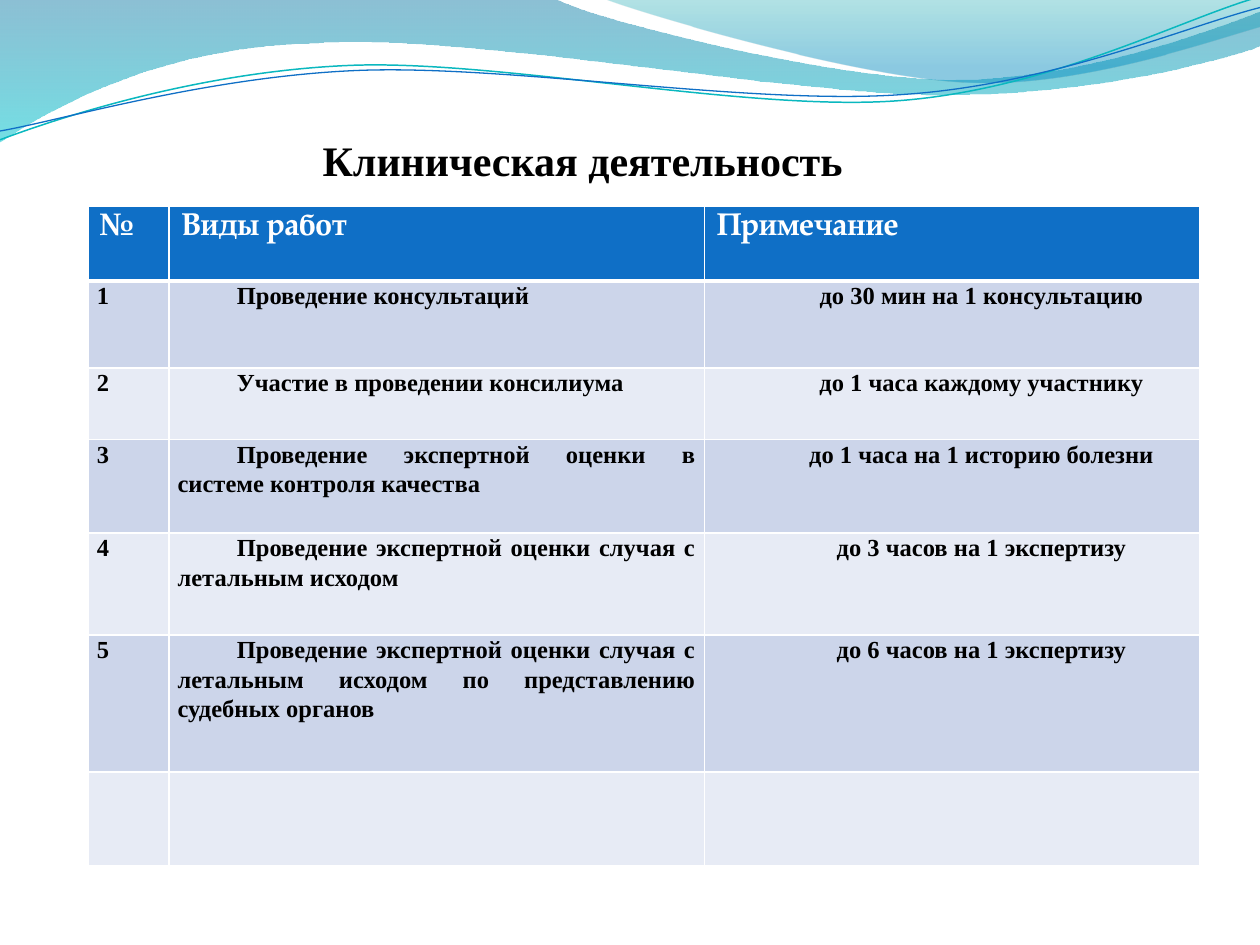
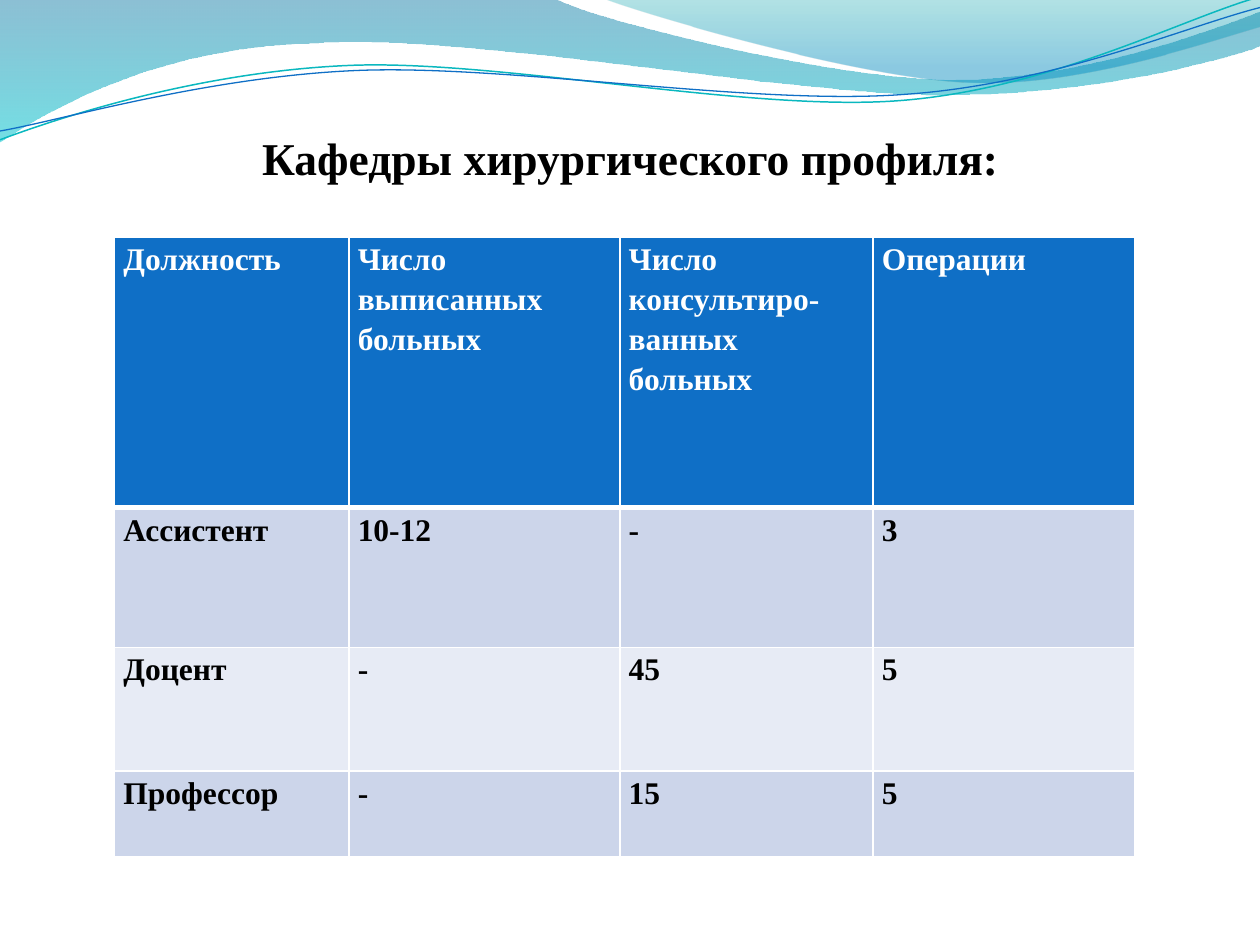
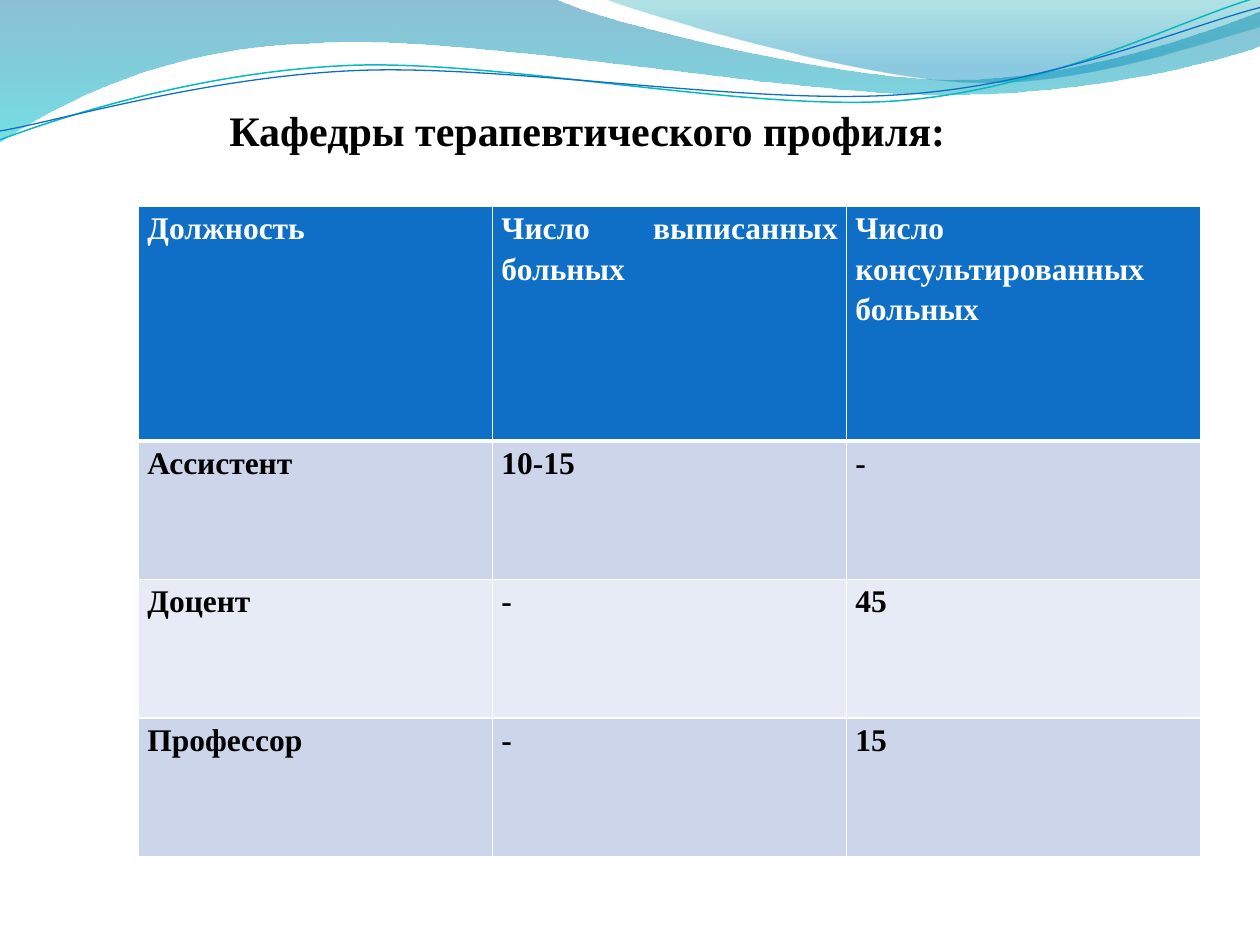
from lxml.etree import Element, SubElement
from pptx import Presentation
from pptx.dml.color import RGBColor
from pptx.enum.text import PP_ALIGN as Align
from pptx.oxml.ns import qn
from pptx.util import Inches, Pt

SERIF = "Times New Roman"
HEADER_FONT = "TeX Gyre Pagella"
WHITE, BLACK, BLUE, TEAL = "FFFFFF", "000000", "0F6FC6", "0AB8BF"
BANDS = ["CCD5EA", "E7EBF5"]

# Waves: start point, then segments of one point (line) or three (Bezier curve).
WAVE_FILLS = [
    ([(0, 0), [(4.4, -0.01)],
      [(4.76, 0.17), (6.64, 0.63), (7.58, 0.63)],
      [(8.53, 0.63), (9.58, 0.26), (10, 0.09)],
      [(10.01, 0.36)],
      [(9.83, 0.44), (8.7, 0.76), (7.46, 0.75)],
      [(6.22, 0.75), (3.82, 0.28), (2.57, 0.34)],
      [(1.29, 0.36), (0.46, 0.83), (-0.01, 1.13)],
      [(0, 0)]],
     [(0, "0074A1", 45), (1, "00C6CF", 55)]),
    ([(4.79, -0.01),
      [(5.09, 0.11), (6.82, 0.62), (7.69, 0.65)],
      [(8.56, 0.69), (9.61, 0.32), (10, 0.21)],
      [(10, 0)], [(4.79, -0.01)]],
     [(0, "00A1A9", 30), (0.8, "008BBF", 45)]),
]
WAVE_LINES = [
    ([(0, 1.11),
      [(0.48, 0.93), (1.58, 0.57), (2.77, 0.52)],
      [(3.95, 0.47), (5.93, 0.89), (7.13, 0.8)],
      [(8.33, 0.71), (9.38, 0.15), (9.98, -0.02)]], TEAL, 0.85),
    ([(0, 1.04),
      [(0.47, 0.96), (1.64, 0.61), (2.83, 0.56)],
      [(4.03, 0.51), (5.97, 0.84), (7.17, 0.75)],
      [(8.36, 0.67), (9.41, 0.21), (10, 0.06)]], BLUE, 0.75),
]

PAGES = [
    {"title": "Клиническая деятельность", "title_size": 24,
     "title_at": (0.55, 1.02, 8.95, 4.92), "title_margin": (2.01, 0.05),
     "table_at": (0.7, 1.64), "columns": [0.64, 4.25, 3.93],
     "heights": [0.59, 0.69, 0.57, 0.74, 0.81, 1.09, 0.74],
     "works": True,
     "rows": [
         ["№", "Виды работ", "Примечание"],
         ["1", "Проведение консультаций", "до 30 мин на 1 консультацию"],
         ["2", "Участие в проведении консилиума", "до 1 часа каждому участнику"],
         ["3", "Проведение экспертной оценки в системе контроля качества",
          "до 1 часа на 1 историю болезни"],
         ["4", "Проведение экспертной оценки случая с летальным исходом",
          "до 3 часов на 1 экспертизу"],
         ["5", "Проведение экспертной оценки случая с летальным исходом "
               "по представлению судебных органов",
          "до 6 часов на 1 экспертизу"],
         ["", "", ""]]},
    {"title": "Кафедры хирургического профиля:", "title_size": 26,
     "title_at": (0.62, 0.39, 8.95, 1.63), "title_margin": (1.46, 0.64),
     "table_at": (0.91, 1.88), "columns": [1.86, 2.15, 2.01, 2.08],
     "heights": [2.15, 1.11, 0.98, 0.68],
     "works": False,
     "rows": [
         ["Должность", "Число выписанных больных",
          "Число консультиро-ванных больных", "Операции"],
         ["Ассистент", "10-12", "-", "3"],
         ["Доцент", "-", "45", "5"],
         ["Профессор", "-", "15", "5"]]},
    {"title": "Кафедры терапевтического профиля:", "title_size": 24,
     "title_at": (0.55, 0.78, 8.95, 1.02), "title_margin": (1.27, 0.05),
     "table_at": (1.1, 1.64), "columns": [2.81] * 3,
     "heights": [1.86] + [1.1] * 3,
     "works": False,
     "rows": [
         ["Должность", "Число выписанных больных",
          "Число консультированных больных"],
         ["Ассистент", "10-15", "-"],
         ["Доцент", "-", "45"],
         ["Профессор", "-", "15"]]},
]
# Alignment, left margin and first-line indent of each column in the list of works
WORK_COLUMNS = [(Align.JUSTIFY, 0.38, -0.38), (Align.JUSTIFY, 0, 0.47),
                (Align.CENTER, 0, 0.47)]


def color(value):
    return RGBColor.from_string(value)


def add_wave(page, outline, closed):
    """Draw the outline's end points, then bend the three-point segments."""
    start, *segments = outline
    builder = page.shapes.build_freeform(Inches(start[0]), Inches(start[1]))
    ends = [(Inches(x), Inches(y)) for x, y in (segment[-1] for segment in segments)]
    builder.add_line_segments(ends, close=closed)
    wave = builder.convert_to_shape()
    wave.shadow.inherit = False
    sides = list(wave.element.iter(qn("a:lnTo")))
    for side, segment in zip(sides, segments):
        if len(segment) == 3:
            curve = Element(qn("a:cubicBezTo"))
            for x, y in segment:
                SubElement(curve, qn("a:pt"), x=str(Inches(x) - wave.left),
                           y=str(Inches(y) - wave.top))
            side.getparent().replace(side, curve)
    return wave


deck = Presentation()
deck.slide_width, deck.slide_height = Inches(10), Inches(7.5)
layout = deck.slide_layouts[6]
for holder in list(layout.placeholders):
    holder.element.getparent().remove(holder.element)
pages = [deck.slides.add_slide(layout) for _ in PAGES]

# The waves are drawn once and moved to the layout that all pages share.
for outline, stops in WAVE_FILLS:
    wave = add_wave(pages[0], outline, True)
    wave.line.fill.background()
    wave.fill.gradient()
    wave.fill.gradient_angle = 270
    for stop, (position, shade, _) in zip(wave.fill.gradient_stops, stops):
        stop.position = position
        stop.color.rgb = color(shade)
    shades = list(wave.element.spPr.iter(qn("a:srgbClr")))
    for shade, (_, _, opacity) in zip(shades, stops):
        SubElement(shade, qn("a:alpha"), val=str(opacity * 1000))
for outline, shade, width in WAVE_LINES:
    wave = add_wave(pages[0], outline, False)
    wave.fill.background()
    wave.line.color.rgb = color(shade)
    wave.line.width = Pt(width)
for wave in list(pages[0].shapes):
    layout.shapes.element.append(wave.element)

for page, content in zip(pages, PAGES):
    box = page.shapes.add_textbox(*map(Inches, content["title_at"]))
    frame = box.text_frame
    frame.word_wrap = True
    frame.margin_left, frame.margin_top = map(Inches, content["title_margin"])
    frame.text = content["title"]
    font = frame.paragraphs[0].runs[0].font
    font.name, font.size, font.bold = SERIF, Pt(content["title_size"]), True
    font.color.rgb = color(BLACK)

    rows, columns, heights = content["rows"], content["columns"], content["heights"]
    left, top = content["table_at"]
    table = page.shapes.add_table(
        len(rows), len(columns), Inches(left), Inches(top),
        Inches(sum(columns)), Inches(sum(heights))).table
    for column, width in zip(table.columns, columns):
        column.width = Inches(width)
    for row, height in zip(table.rows, heights):
        row.height = Inches(height)

    for r, texts in enumerate(rows):
        for c, text in enumerate(texts):
            cell = table.cell(r, c)
            is_header = r == 0
            works_header = is_header and content["works"]
            borders = {"a:lnL": 1, "a:lnR": 1, "a:lnT": 3 if r == 1 else 1,
                       "a:lnB": 3 if is_header else 1}
            for tag, width in borders.items():
                edge = SubElement(cell._tc.get_or_add_tcPr(), qn(tag), w=str(Pt(width)))
                SubElement(SubElement(edge, qn("a:solidFill")), qn("a:srgbClr"), val=WHITE)
            cell.fill.solid()
            cell.fill.fore_color.rgb = color(BLUE if is_header else BANDS[(r - 1) % 2])

            cell.text_frame.text = text
            para = cell.text_frame.paragraphs[0]
            if not works_header:
                cell.margin_left = cell.margin_right = Inches(0.07)
                cell.margin_top = cell.margin_bottom = 0
                if content["works"]:
                    para.alignment, margin, indent = WORK_COLUMNS[c]
                    para.line_spacing, para.space_before = 1.08, Pt(10)
                    properties = para._p.get_or_add_pPr()
                    properties.set("marL", str(Inches(margin)))
                    properties.set("indent", str(Inches(indent)))
                else:
                    para.alignment = Align.JUSTIFY
                    para.line_spacing, para.space_after = 1.15, Pt(10)
            for span in para.runs:
                span.font.name = HEADER_FONT if works_header else SERIF
                span.font.size = Pt(14 if content["works"] and not is_header else 18)
                span.font.bold = True
                span.font.color.rgb = color(WHITE if is_header else BLACK)

deck.save("out.pptx")
